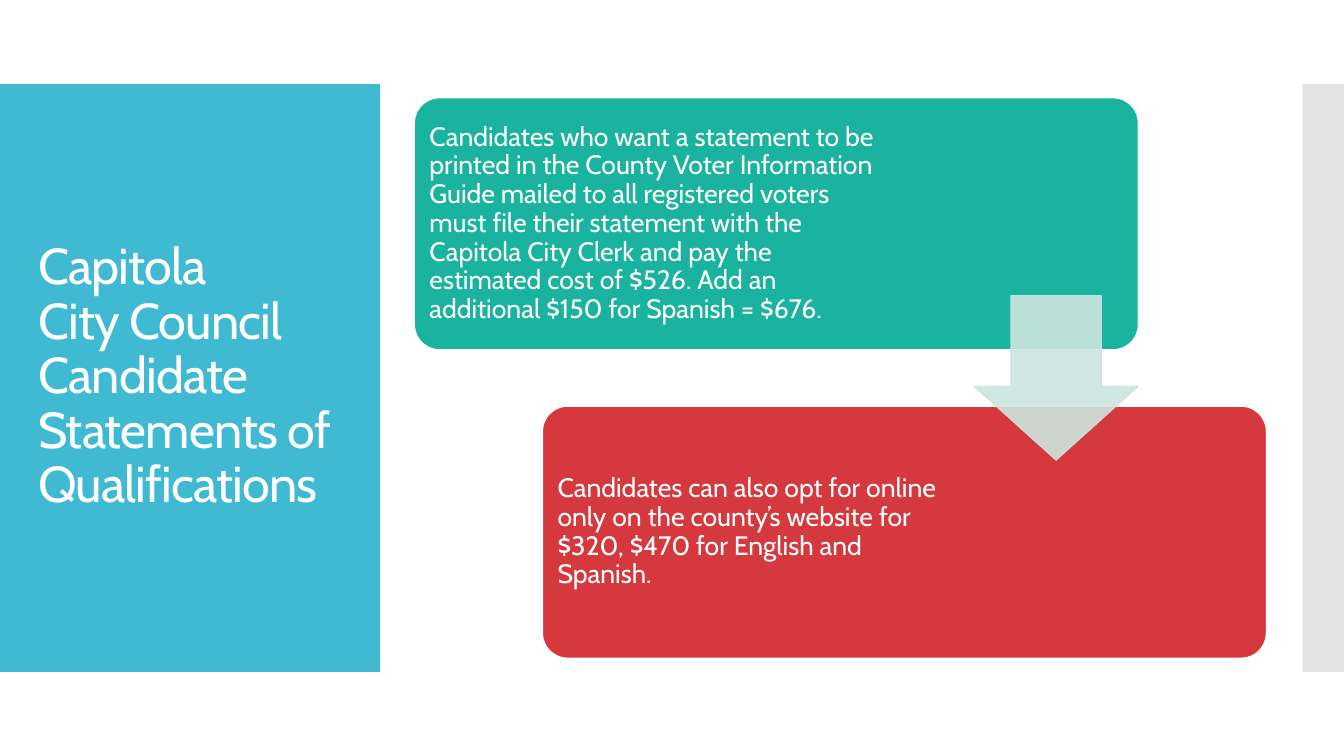
from lxml.etree import SubElement
from pptx import Presentation
from pptx.dml.color import RGBColor
from pptx.enum.shapes import MSO_SHAPE
from pptx.enum.text import MSO_ANCHOR, PP_ALIGN
from pptx.oxml.ns import qn
from pptx.util import Inches, Pt

WHITE = RGBColor(0xFF, 0xFF, 0xFF)
BLUE = RGBColor(0x40, 0xBA, 0xD2)
GRAY = RGBColor(0xC8, 0xC8, 0xC8)
GREEN = RGBColor(0x1A, 0xB3, 0x9F)
RED = RGBColor(0xD5, 0x39, 0x3D)
MINT = RGBColor(0xCD, 0xE5, 0xDF)
FONT = "Cabin"

TITLE = "Capitola\vCity Council Candidate Statements of Qualifications"
# text, fill, text width
CARDS = [
    ("Candidates who want a statement to be printed in the County Voter "
     "Information Guide mailed to all registered voters must file their "
     "statement with the Capitola City Clerk and pay the estimated cost of "
     "$526. Add an additional $150 for Spanish = $676.", GREEN, 4.6),
    ("Candidates can also opt for online only on the county’s website for "
     "$320, $470 for English and Spanish.", RED, 4.14),
]

WIDE, HIGH = 13.33, 7.5
BAND_Y, BAND_H = HIGH / 9, HIGH * 7 / 9
LEFT, TOP = 4.11, 0.97
CARD_W, CARD_H = 7.18, 2.5
STEP_X, STEP_Y = 1.27, 3.06
PAD = 0.07
ARROW = 1.63

deck = Presentation()
deck.slide_width, deck.slide_height = Inches(WIDE), Inches(HIGH)
slide = deck.slides.add_slide(deck.slide_layouts[6])


def fade(fill, share):
    """Make a solid fill opaque only to the given percentage."""
    color = fill._xPr.find(qn("a:solidFill"))[0]
    SubElement(color, qn("a:alpha")).set("val", str(share * 1000))


def add_block(kind, box, color, edge=None, share=100, adjust=()):
    block = slide.shapes.add_shape(kind, *map(Inches, box))
    block.shadow.inherit = False
    for i, value in enumerate(adjust):
        block.adjustments[i] = value
    fills = [block.fill]
    block.fill.solid()
    block.fill.fore_color.rgb = color
    if edge is None:
        block.line.fill.background()
    else:
        block.line.color.rgb = edge
        block.line.width = Pt(0.85)
        fills.append(block.line.fill)
    if share < 100:
        for fill in fills:
            fade(fill, share)


def add_text(text, box, size, inset):
    frame = slide.shapes.add_textbox(*map(Inches, box)).text_frame
    frame.word_wrap = True
    frame.vertical_anchor = MSO_ANCHOR.MIDDLE
    frame.margin_left = frame.margin_right = Inches(inset)
    frame.margin_top = frame.margin_bottom = Inches(inset)
    para = frame.paragraphs[0]
    para.text = text
    para.alignment = PP_ALIGN.LEFT
    para.line_spacing = 0.9
    para.font.name, para.font.size = FONT, Pt(size)
    para.font.color.rgb = WHITE
    return para


add_block(MSO_SHAPE.RECTANGLE, (0, BAND_Y, 3.77, BAND_H), BLUE)
add_block(MSO_SHAPE.RECTANGLE, (12.92, BAND_Y, WIDE - 12.92, BAND_H), GRAY, share=50)
title = add_text(TITLE, (0.28, 1.23, 3.22, 5.03), 36, 0.1)
for run in title.runs:
    run.font._element.set("spc", "-60")

for i, (text, color, width) in enumerate(CARDS):
    x, y = LEFT + i * STEP_X, TOP + i * STEP_Y
    add_block(MSO_SHAPE.ROUNDED_RECTANGLE, (x, y, CARD_W, CARD_H), color,
              WHITE, adjust=[0.1])
    add_text(text, (x + PAD, y + PAD, width, CARD_H - 2 * PAD), 19, 0.08)

# The arrow ends flush with the first card and is centred on the gap.
middle = TOP + (CARD_H + STEP_Y) / 2
add_block(MSO_SHAPE.DOWN_ARROW,
          (LEFT + CARD_W - ARROW, middle - ARROW / 2, ARROW, ARROW),
          MINT, MINT, 90, [0.55, 0.45])

deck.save("out.pptx")
